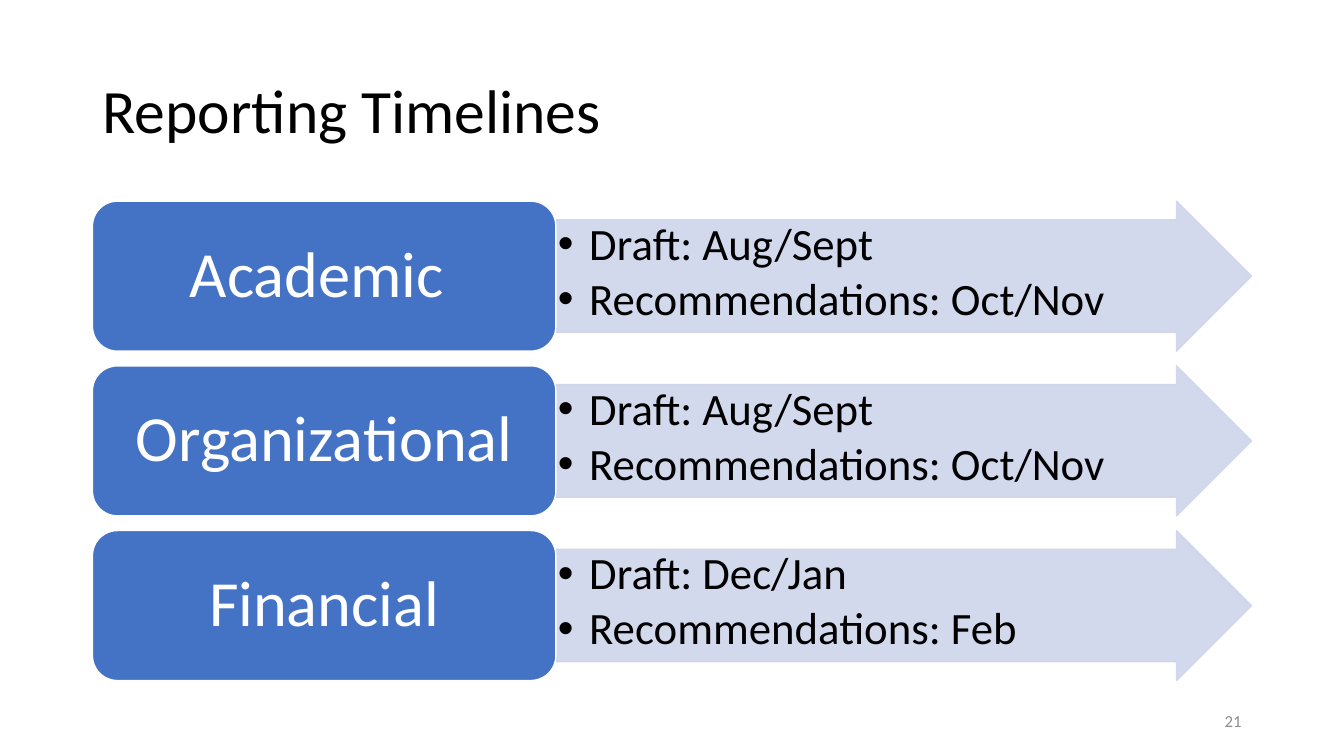
from dataclasses import dataclass

from lxml import etree
from pptx import Presentation
from pptx import util as u
from pptx.dml.color import RGBColor
from pptx.enum import shapes, text
from pptx.oxml.ns import qn

COLORS = {
    "black": "000000",
    "white": "FFFFFF",
    "label": "4472C4",
    "arrow": "CFD5EA",
    "number": "8C8C8C",
}
FONT = "Calibri"

# Layout of the rows, in centimetres
LEFT, TOP = 2.33, 5.07
LABEL_WIDTH, ARROW_WIDTH = 11.68, 17.53
ROW_HEIGHT, ROW_PITCH = 3.78, 4.15


@dataclass
class Timeline:
    label: str
    draft: str
    recommendations: str


TIMELINES = [
    Timeline("Academic ", "Aug/Sept", "Oct/Nov"),
    Timeline("Organizational", "Aug/Sept", "Oct/Nov"),
    Timeline("Financial", "Dec/Jan", "Feb"),
]


def color(name: str) -> RGBColor:
    return RGBColor.from_string(COLORS[name])


def write(frame, content: str, size: float, ink: str, align, anchor,
          spacing: float = 0.9) -> None:
    """Fill a text frame and format all of its runs."""
    frame.text = content
    frame.word_wrap = True
    frame.auto_size = text.MSO_AUTO_SIZE.NONE
    frame.vertical_anchor = anchor
    for para in frame.paragraphs:
        para.alignment = align
        para.line_spacing = spacing
        for span in para.runs:
            span.font.name = FONT
            span.font.size = u.Pt(size)
            span.font.color.rgb = color(ink)


def set_margins(frame, side: float, end: float) -> None:
    frame.margin_left = frame.margin_right = u.Cm(side)
    frame.margin_top = frame.margin_bottom = u.Cm(end)


def add_bullet(para) -> None:
    properties = para._p.get_or_add_pPr()
    properties.set("marL", str(u.Cm(0.79)))
    properties.set("indent", str(u.Cm(-0.79)))
    etree.SubElement(properties, qn("a:buFont")).set("typeface", "Arial")
    etree.SubElement(properties, qn("a:buChar")).set("char", "•")


def add_block(page, kind, left: float, top: float, width: float,
              fill: str, line: str):
    block = page.shapes.add_shape(
        kind, u.Cm(left), u.Cm(top), u.Cm(width), u.Cm(ROW_HEIGHT))
    block.shadow.inherit = False
    block.fill.solid()
    block.fill.fore_color.rgb = color(fill)
    block.line.color.rgb = color(line)
    block.line.width = u.Pt(1)
    return block


def add_timeline(page, timeline: Timeline, top: float) -> None:
    # Arrow with the two dates
    arrow = add_block(page, shapes.MSO_SHAPE.RIGHT_ARROW, LEFT + LABEL_WIDTH,
                      top, ARROW_WIDTH, "arrow", "arrow")
    arrow.adjustments[0] = 0.75
    arrow.adjustments[1] = 0.5
    for tint in arrow._element.spPr.iter(qn("a:srgbClr")):
        etree.SubElement(tint, qn("a:alpha")).set("val", "90000")
    frame = arrow.text_frame
    set_margins(frame, 0.05, 0.05)
    dates = (f"Draft: {timeline.draft}\n"
             f"Recommendations: {timeline.recommendations}")
    write(frame, dates, 32, "black", text.PP_ALIGN.LEFT, text.MSO_ANCHOR.TOP)
    for para in frame.paragraphs:
        para.space_after = u.Pt(4.5)
        add_bullet(para)

    # Rounded label
    label = add_block(page, shapes.MSO_SHAPE.ROUNDED_RECTANGLE, LEFT, top,
                      LABEL_WIDTH, "label", "white")
    set_margins(label.text_frame, 0.48, 0.25)
    write(label.text_frame, timeline.label, 46, "white",
          text.PP_ALIGN.CENTER, text.MSO_ANCHOR.MIDDLE)


def main() -> None:
    deck = Presentation()
    deck.slide_width, deck.slide_height = u.Cm(33.87), u.Cm(19.05)
    page = deck.slides.add_slide(deck.slide_layouts.get_by_name("Title Only"))

    # Title
    title = page.shapes.title
    title.left, title.top = u.Cm(LEFT), u.Cm(1.01)
    title.width, title.height = u.Cm(29.21), u.Cm(3.68)
    write(title.text_frame, "Reporting Timelines", 44, "black",
          text.PP_ALIGN.LEFT, text.MSO_ANCHOR.MIDDLE)

    # Timelines
    for row, timeline in enumerate(TIMELINES):
        add_timeline(page, timeline, TOP + row * ROW_PITCH)

    # Slide number
    number = page.shapes.add_textbox(
        u.Cm(23.92), u.Cm(17.66), u.Cm(7.62), u.Cm(1.01))
    write(number.text_frame, "21", 12, "number",
          text.PP_ALIGN.RIGHT, text.MSO_ANCHOR.MIDDLE, spacing=1.0)

    deck.save("out.pptx")


if __name__ == "__main__":
    main()
